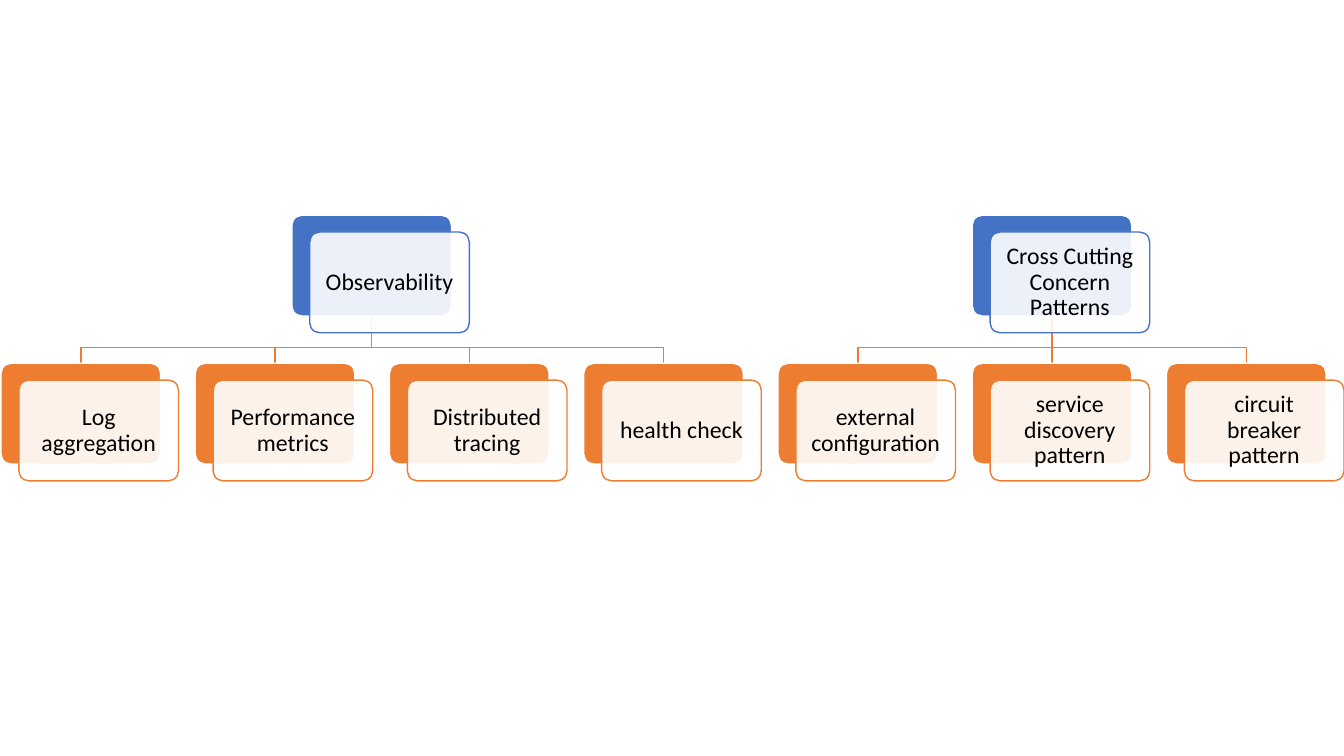
from pptx import Presentation
from pptx.dml.color import RGBColor
from pptx.enum.shapes import MSO_CONNECTOR, MSO_SHAPE
from pptx.enum.text import MSO_ANCHOR, PP_ALIGN
from pptx.oxml.ns import qn
from pptx.util import Pt
from lxml import etree

STRAIGHT = MSO_CONNECTOR.STRAIGHT
ROUNDED = MSO_SHAPE.ROUNDED_RECTANGLE
MIDDLE = MSO_ANCHOR.MIDDLE
CENTER = PP_ALIGN.CENTER

PX = 9525
COLORS = {"root": "4472C4", "leaf": "ED7D31", "white": "FFFFFF", "text": "000000"}

SLIDE_W, SLIDE_H = 1280, 720
CARD_W, CARD_H = 152, 96
SHIFT_X, SHIFT_Y = 17, 16
LEFT, PITCH = 1, 185
ROOT_Y, BUS_Y, LEAF_Y = 205, 331, 346
INSET = 7

TREES = [
    ("Observability",
     ["Log aggregation", "Performance metrics", "Distributed tracing", "health check"]),
    ("Cross Cutting Concern Patterns",
     ["external configuration", "service discovery pattern", "circuit breaker pattern"]),
]


class Chart:
    def __init__(self, slide):
        self.shapes = slide.shapes
        self.font = {"name": "Calibri", "size": Pt(17)}
        self.frame = {"word_wrap": True, "vertical_anchor": MIDDLE}
        self.frame.update({f"margin_{side}": INSET * PX
                           for side in ("left", "right", "top", "bottom")})
        self.paragraph = {"alignment": CENTER, "line_spacing": 0.9}

    def apply(self, target, values):
        for name, value in values.items():
            setattr(target, name, value)

    def outline(self, sp, color):
        sp.line.color.rgb = RGBColor.from_string(COLORS[color])
        sp.line.width = Pt(1)

    def box(self, x, y, fill, line):
        sp = self.shapes.add_shape(ROUNDED, x * PX, y * PX, CARD_W * PX, CARD_H * PX)
        sp.adjustments[0] = 0.1
        sp.shadow.inherit = False
        sp.fill.solid()
        sp.fill.fore_color.rgb = RGBColor.from_string(COLORS[fill])
        self.outline(sp, line)
        return sp

    def card(self, x, y, text, color):
        """Draw a solid box with a translucent, labelled box offset over it."""
        self.box(x, y, color, "white")
        sp = self.box(x + SHIFT_X, y + SHIFT_Y, "white", color)
        rgb = sp._element.spPr.find(qn("a:solidFill"))[0]
        etree.SubElement(rgb, qn("a:alpha")).set("val", "90000")
        tf = sp.text_frame
        self.apply(tf, self.frame)
        p = tf.paragraphs[0]
        self.apply(p, self.paragraph)
        r = p.add_run()
        r.text = text
        self.apply(r.font, self.font)
        r.font.color.rgb = RGBColor.from_string(COLORS["text"])

    def branch(self, root_x, leaf_x):
        """Link the centre of a root's bottom edge to the centre of a leaf's top edge."""
        x1, x2 = root_x + CARD_W // 2, leaf_x + CARD_W // 2
        y1 = ROOT_Y + CARD_H
        if x1 == x2:
            sp = self.shapes.add_connector(STRAIGHT, x1 * PX, y1 * PX, x2 * PX, LEAF_Y * PX)
            etree.SubElement(sp._element.spPr, qn("a:effectLst"))
        else:
            path = self.shapes.build_freeform(x1, y1, scale=PX)
            path.add_line_segments([(x1, BUS_Y), (x2, BUS_Y), (x2, LEAF_Y)], close=False)
            sp = path.convert_to_shape()
            sp.fill.background()
            sp.shadow.inherit = False
        self.outline(sp, "leaf")


def main():
    prs = Presentation()
    prs.slide_width, prs.slide_height = SLIDE_W * PX, SLIDE_H * PX
    chart = Chart(prs.slides.add_slide(prs.slide_layouts[6]))

    column = 0
    placed = []
    for root, leaves in TREES:
        xs = [LEFT + PITCH * (column + i) for i in range(len(leaves))]
        column += len(leaves)
        placed.append((root, (xs[0] + xs[-1]) // 2, list(zip(leaves, xs))))

    for _, root_x, leaves in placed:
        for _, leaf_x in leaves:
            chart.branch(root_x, leaf_x)
    for root, root_x, leaves in placed:
        chart.card(root_x, ROOT_Y, root, "root")
        for leaf, leaf_x in leaves:
            chart.card(leaf_x, LEAF_Y, leaf, "leaf")

    prs.save("out.pptx")


if __name__ == "__main__":
    main()
